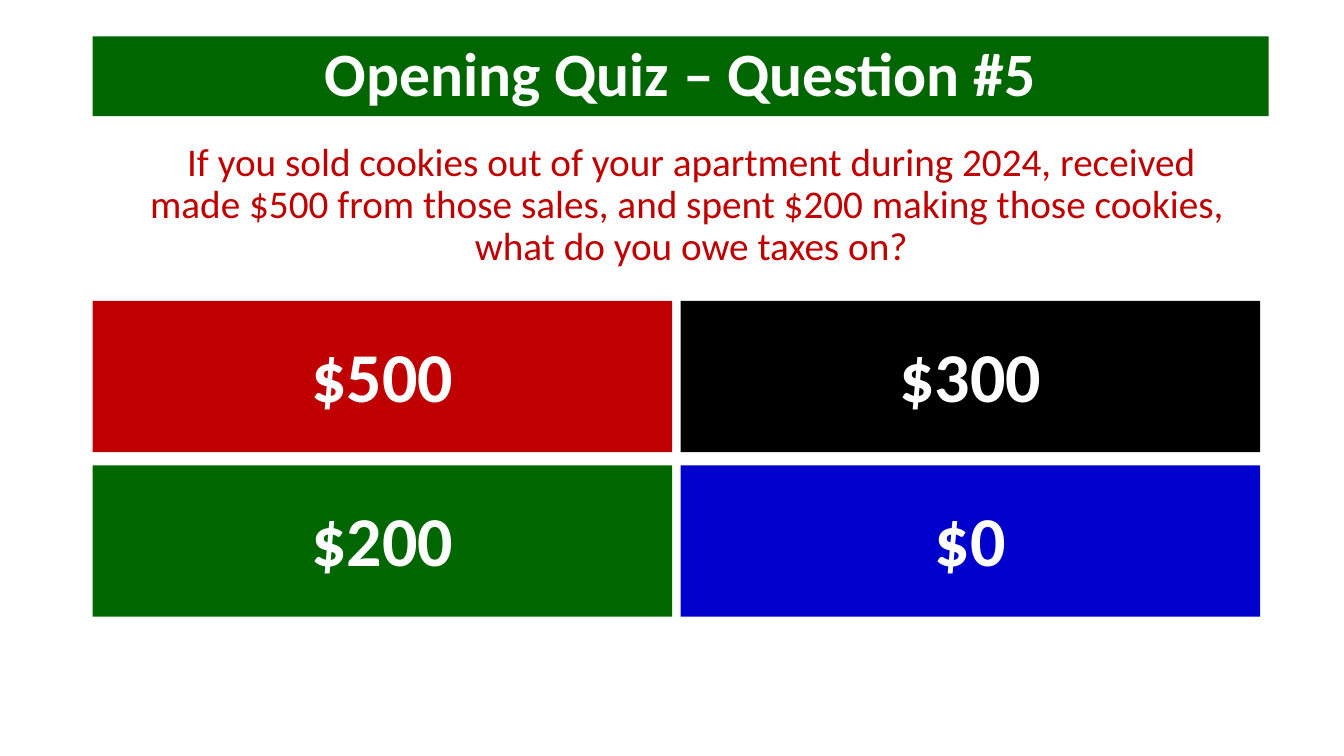
from pptx import Presentation
from pptx.dml.color import RGBColor
from pptx.enum.shapes import MSO_SHAPE
from pptx.enum.text import MSO_ANCHOR, PP_ALIGN
from pptx.util import Pt

RECTANGLE = MSO_SHAPE.RECTANGLE
TOP, MIDDLE = MSO_ANCHOR.TOP, MSO_ANCHOR.MIDDLE
CENTER = PP_ALIGN.CENTER

COLORS = {
    "green": "006600",
    "red": "C00000",
    "black": "000000",
    "blue": "0000CC",
    "white": "FFFFFF",
}

deck = Presentation()
deck.slide_width, deck.slide_height = Pt(960), Pt(540)
page = deck.slides.add_slide(deck.slide_layouts[6])


def add_text(text, left, top, width, height, *, size, color="white",
             bold=False, fill=None, anchor=MIDDLE, inset_top=3.6):
    """Add centred text, in a filled rectangle if a fill is named."""
    place = Pt(left), Pt(top), Pt(width), Pt(height)
    if fill:
        box = page.shapes.add_shape(RECTANGLE, *place)
        box.shadow.inherit = False
        box.fill.solid()
        box.fill.fore_color.rgb = RGBColor.from_string(COLORS[fill])
        box.line.fill.background()
    else:
        box = page.shapes.add_textbox(*place)
    frame = box.text_frame
    frame.word_wrap = True
    frame.vertical_anchor = anchor
    frame.margin_top = Pt(inset_top)
    para = frame.paragraphs[0]
    para.text = text
    para.alignment = CENTER
    para.line_spacing = 0.9
    for span in para.runs:
        span.font.name = "Calibri"
        span.font.size = Pt(size)
        span.font.bold = bold
        span.font.color.rgb = RGBColor.from_string(COLORS[color])


# Title bar
LEFT = 66.2
add_text("Opening Quiz – Question #5", LEFT, 26, 840, 57,
         size=44, bold=True, fill="green")

# Question, with line breaks inside one paragraph
question = ("If you sold cookies out of your apartment during 2024, received\v"
            "made $500 from those sales, and spent $200 making those cookies, \v"
            "what do you owe taxes on?")
add_text(question, LEFT, 98, 855, 105, size=28, color="red", anchor=TOP)

# Answers in a grid of two columns
ANSWER_WIDTH, ANSWER_HEIGHT = 414, 108
COLUMN_STEP, ROW_STEP = 420, 117.5
answers = [("$500", "red"), ("$300", "black"), ("$200", "green"), ("$0", "blue")]
for index, (answer, fill) in enumerate(answers):
    row, column = divmod(index, 2)
    add_text(answer, LEFT + column * COLUMN_STEP, 215 + row * ROW_STEP,
             ANSWER_WIDTH, ANSWER_HEIGHT,
             size=50, bold=True, fill=fill, inset_top=7.6)

deck.save("out.pptx")
